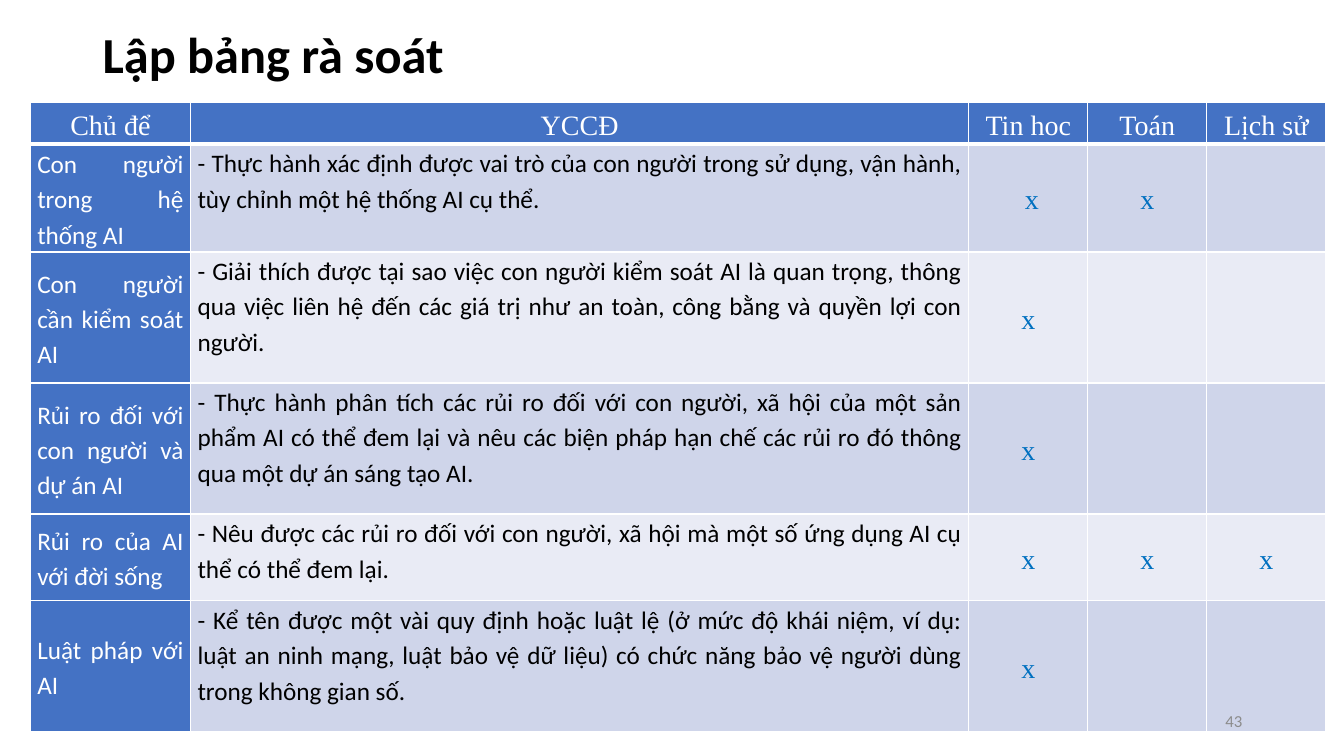
from lxml import etree
from pptx import Presentation
from pptx.dml.color import RGBColor
from pptx.enum import text
from pptx.oxml import ns
from pptx.util import Inches, Pt

TITLE = "Lập bảng rà soát"
PAGE_NUMBER = "43"
HEADERS = ["Chủ để", "YCCĐ", "Tin hoc", "Toán", "Lịch sử"]
TOPICS = [
    ("Con người trong hệ thống AI",
     "- Thực hành xác định được vai trò của con người trong sử dụng, vận hành, "
     "tùy chỉnh một hệ thống AI cụ thể.", " x", "x", ""),
    ("Con người cần kiểm soát AI",
     "- Giải thích được tại sao việc con người kiểm soát AI là quan trọng, thông "
     "qua việc liên hệ đến các giá trị như an toàn, công bằng và quyền lợi con người.",
     "x", "", ""),
    ("Rủi ro đối với con người và dự án AI",
     "- Thực hành phân tích các rủi ro đối với con người, xã hội của một sản phẩm AI "
     "có thể đem lại và nêu các biện pháp hạn chế các rủi ro đó thông qua một dự án "
     "sáng tạo AI.", "x", "", ""),
    ("Rủi ro của AI với đời sống",
     "- Nêu được các rủi ro đối với con người, xã hội mà một số ứng dụng AI cụ thể "
     "có thể đem lại.", "x", "x", "x"),
    ("Luật pháp với AI",
     "- Kể tên được một vài quy định hoặc luật lệ (ở mức độ khái niệm, ví dụ: luật an "
     "ninh mạng, luật bảo vệ dữ liệu) có chức năng bảo vệ người dùng trong không gian số.",
     "x", "", ""),
]
COLUMN_WIDTHS = [1.59, 7.72, 1.18, 1.18, 1.18]
ROW_HEIGHTS = [0.41, 1.07, 1.3, 1.3, 0.86, 1.3]

BLACK = RGBColor(0x00, 0x00, 0x00)
WHITE = RGBColor(0xFF, 0xFF, 0xFF)
GRAY = RGBColor(0x8C, 0x8C, 0x8C)
HEADER_BLUE = RGBColor(0x44, 0x72, 0xC4)
MARK_BLUE = RGBColor(0x00, 0x70, 0xC0)
BANDS = [RGBColor(0xE9, 0xEB, 0xF5), RGBColor(0xCF, 0xD5, 0xEA)]
SANS, SERIF = "Calibri", "Times New Roman"
CENTER, JUSTIFY = text.PP_ALIGN.CENTER, text.PP_ALIGN.JUSTIFY
MIDDLE, TOP = text.MSO_ANCHOR.MIDDLE, text.MSO_ANCHOR.TOP


def style(para, font_name, size, color, align, bold=False):
    para.alignment = align
    for span in para.runs:
        span.font.name = font_name
        span.font.size = Pt(size)
        span.font.bold = bold
        span.font.color.rgb = color


def add_text(page, place, words):
    box = page.shapes.add_textbox(*map(Inches, place))
    frame = box.text_frame
    frame.word_wrap = True
    frame.vertical_anchor = MIDDLE
    frame.text = words
    return frame.paragraphs[0]


def add_borders(cell, row):
    """White cell edges, thicker between the header and the first topic."""
    thick = {(0, "B"), (1, "T")}
    properties = cell._tc.get_or_add_tcPr()
    for side in "LRTB":
        width = Pt(3 if (row, side) in thick else 1)
        line = etree.SubElement(properties, ns.qn(f"a:ln{side}"), w=str(width))
        fill = etree.SubElement(line, ns.qn("a:solidFill"))
        etree.SubElement(fill, ns.qn("a:srgbClr"), val=str(WHITE))


def fill_cell(cell, row, column, words):
    add_borders(cell, row)
    cell.fill.solid()
    is_heading = row == 0 or column == 0
    cell.fill.fore_color.rgb = HEADER_BLUE if is_heading else BANDS[row % 2]
    cell.margin_left = cell.margin_right = Inches(0.07)
    cell.margin_top = cell.margin_bottom = 0
    cell.vertical_anchor = TOP if row and column == 1 else MIDDLE
    if not words:
        return
    cell.text = words
    para = cell.text_frame.paragraphs[0]
    para.line_spacing = 1.15
    if row == 0:
        style(para, SERIF, 20, WHITE, CENTER)
    elif column < 2:
        style(para, SANS, 18, BLACK if column else WHITE, JUSTIFY)
    else:
        style(para, SERIF, 20, MARK_BLUE, CENTER)


def add_review_table(page):
    rows = [HEADERS, *TOPICS]
    size = (sum(COLUMN_WIDTHS), sum(ROW_HEIGHTS))
    table = page.shapes.add_table(
        len(rows), len(HEADERS), *map(Inches, (0.3, 1.02, *size))).table
    for column, width in zip(table.columns, COLUMN_WIDTHS):
        column.width = Inches(width)
    for row, height in zip(table.rows, ROW_HEIGHTS):
        row.height = Inches(height)
    for r, row in enumerate(rows):
        for c, words in enumerate(row):
            fill_cell(table.cell(r, c), r, c, words)


def main():
    deck = Presentation()
    deck.slide_width, deck.slide_height = Inches(13.33), Inches(7.5)
    page = deck.slides.add_slide(deck.slide_layouts[6])

    title = add_text(page, (0.92, 0.29, 11.5, 0.56), TITLE)
    title.line_spacing = 0.9
    style(title, SANS, 36, BLACK, text.PP_ALIGN.LEFT, bold=True)

    add_review_table(page)

    number = add_text(page, (9.42, 6.95, 3, 0.4), PAGE_NUMBER)
    style(number, SANS, 12, GRAY, text.PP_ALIGN.RIGHT)
    deck.save("out.pptx")


if __name__ == "__main__":
    main()
